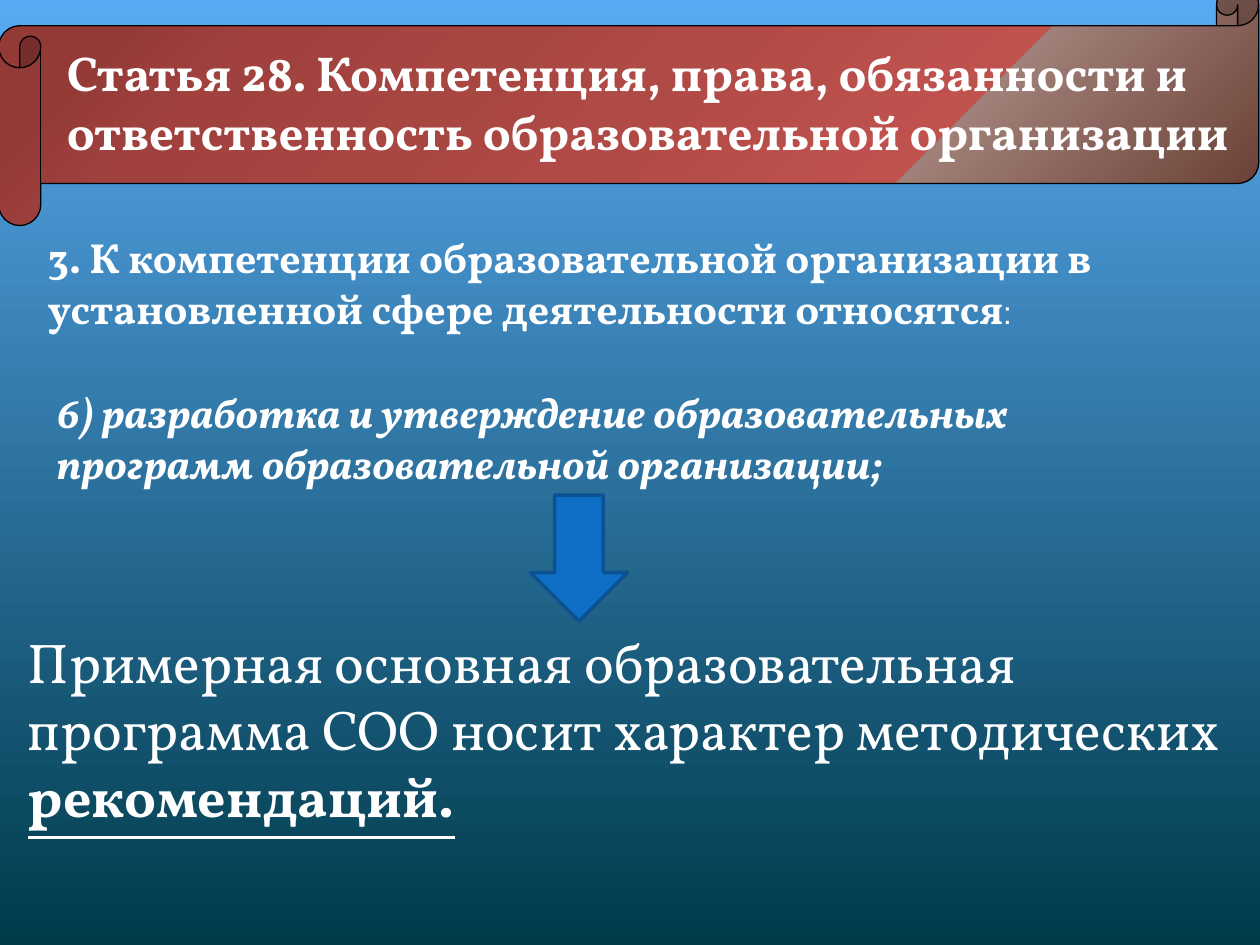
from lxml.etree import SubElement
from pptx import Presentation
from pptx.dml.color import RGBColor
from pptx.enum.shapes import MSO_SHAPE
from pptx.enum.text import MSO_ANCHOR, MSO_AUTO_SIZE, PP_ALIGN
from pptx.oxml.ns import qn
from pptx.util import Inches, Pt

FONT = "Vollkorn"
WHITE = "FFFFFF"
BACKGROUND_STOPS = [(0, "59AAF2"), (100, "003B4B")]
SCROLL_STOPS = [
    (11, "933A37"), (21, "A0413E"), (38, "A84642"), (50, "B04A46"),
    (73, "C0524E"), (73, "A08078"), (99, "683D33"), (100, "55261C"),
]


def color(value):
    return RGBColor.from_string(value)


def place(shape, box):
    shape.left, shape.top, shape.width, shape.height = map(Inches, box)


def set_gradient(fill, element, stops, angle):
    fill.gradient()
    gradient = next(element.iter(qn("a:gradFill")))
    for child in list(gradient):
        gradient.remove(child)
    stop_list = SubElement(gradient, qn("a:gsLst"))
    for position, value in stops:
        stop = SubElement(stop_list, qn("a:gs"), pos=str(position * 1000))
        SubElement(stop, qn("a:srgbClr"), val=value)
    SubElement(gradient, qn("a:lin"), ang=str(angle * 60000), scaled="0")


def write_text(shape, box, parts, size):
    place(shape, box)
    frame = shape.text_frame
    frame.word_wrap = True
    frame.auto_size = MSO_AUTO_SIZE.NONE
    frame.vertical_anchor = MSO_ANCHOR.TOP
    para = frame.paragraphs[0]
    para.alignment = PP_ALIGN.LEFT
    for text, style in parts:
        span = para.add_run()
        span.text = text
        font = span.font
        font.name = style.get("name", FONT)
        font.size = Pt(style.get("size", size))
        font.color.rgb = color(WHITE)
        font.bold = style.get("bold", False)
        font.italic = style.get("italic", False)
        font.underline = style.get("underline", False)
    return para


def add_banner(page, box):
    left, top, width, height = box
    scroll = page.shapes.add_shape(MSO_SHAPE.HORIZONTAL_SCROLL, *map(Inches, box))
    scroll.adjustments[0] = 0.174
    scroll.shadow.inherit = False
    set_gradient(scroll.fill, scroll.element, SCROLL_STOPS, 45)
    scroll.line.color.rgb = color("000000")
    scroll.line.width = Pt(0)
    page.shapes.title.element.addprevious(scroll.element)
    title_box = (left + 0.44, top + 0.42, width - 0.24, 1.04)
    heading = "Статья 28. Компетенция, права, обязанности и ответственность образовательной организации"
    write_text(page.shapes.title, title_box, [(heading, {"bold": True})], 28)


def add_clause(page, box, parts):
    write_text(page.shapes.add_textbox(*map(Inches, box)), box, parts, 24)


def add_arrow(page, box):
    arrow = page.shapes.add_shape(MSO_SHAPE.DOWN_ARROW, *map(Inches, box))
    arrow.shadow.inherit = False
    arrow.fill.solid()
    arrow.fill.fore_color.rgb = color("0F6FC6")
    arrow.line.color.rgb = color("0B5292")
    arrow.line.width = Pt(2)


def add_conclusion(page, box):
    para = write_text(page.placeholders[1], box, [
        ("Примерная основная образовательная программа СОО носит характер методических ", {}),
        ("рекомендаций.", {"bold": True, "underline": True}),
    ], 32)
    properties = para._p.get_or_add_pPr()
    properties.set("marL", "0")
    properties.set("indent", "0")
    SubElement(properties, qn("a:buNone"))


def main():
    deck = Presentation()
    deck.slide_width, deck.slide_height = Inches(10), Inches(7.5)
    page = deck.slides.add_slide(deck.slide_layouts[1])
    set_gradient(page.background.fill, page.element, BACKGROUND_STOPS, 90)
    add_banner(page, (-0.01, -0.13, 10, 1.92))
    add_clause(page, (0.28, 1.79, 9.21, 0.91), [
        ("3. К компетенции образовательной организации в установленной сфере деятельности относятся",
         {"bold": True}),
        (":", {"name": "Arial", "size": 18}),
    ])
    add_clause(page, (0.35, 3.02, 9.06, 0.91), [
        ("6) разработка и утверждение образовательных программ образовательной организации;",
         {"bold": True, "italic": True}),
    ])
    add_arrow(page, (4.21, 3.93, 0.77, 1))
    add_conclusion(page, (0.12, 4.93, 9.69, 1.81))
    deck.save("out.pptx")


if __name__ == "__main__":
    main()
